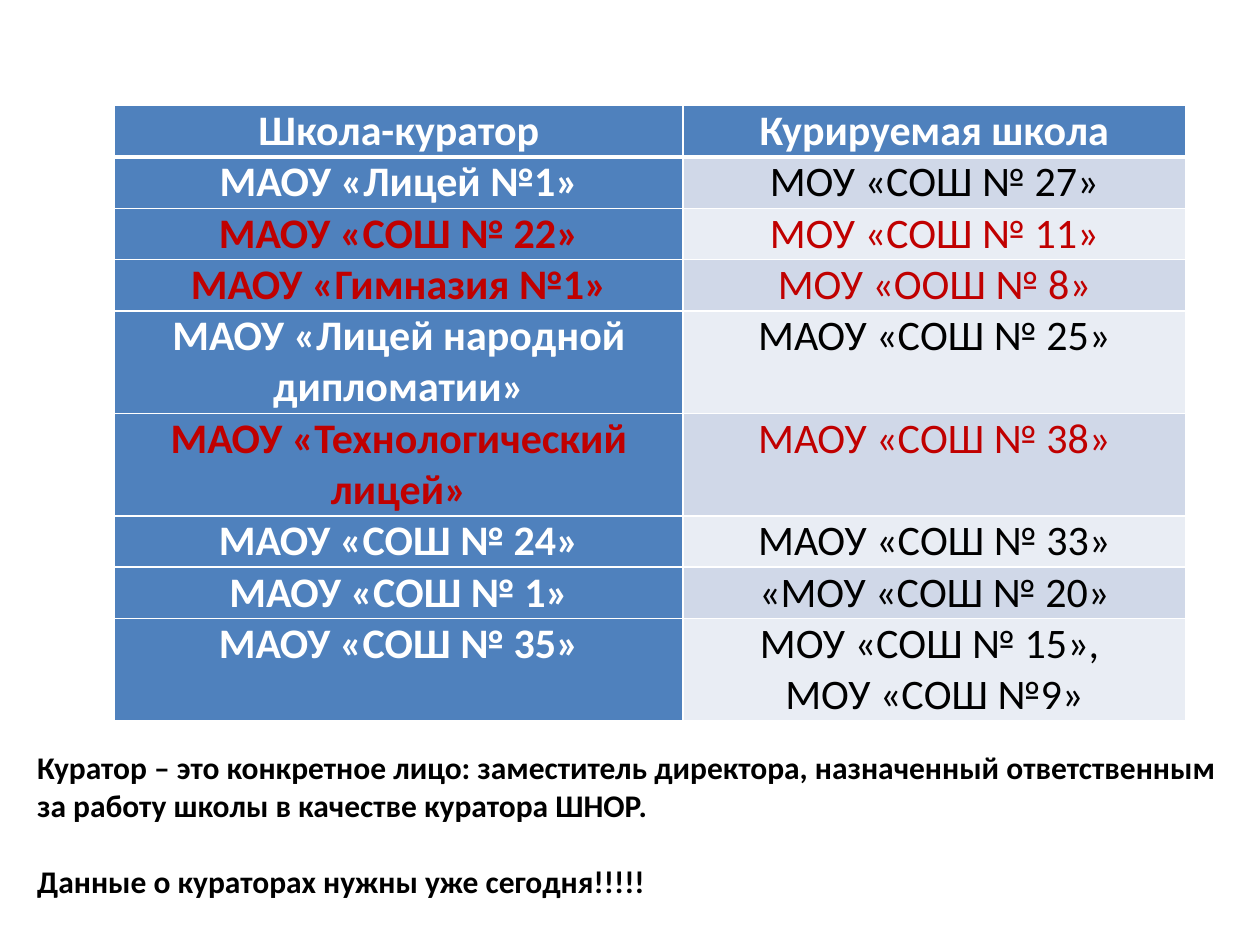
from lxml.etree import SubElement as Sub
from pptx import Presentation
from pptx.dml.color import RGBColor
from pptx.enum.text import PP_ALIGN as Align
from pptx.oxml.ns import qn
from pptx.util import Cm, Pt

BLUE, RED, WHITE, BLACK = "4F81BD", "C00000", "FFFFFF", "000000"
BANDS = ["D0D8E8", "E9EDF4"]
LINE = 1.03  # height of one line of table text, cm

HEADS = ["Школа-куратор", "Курируемая школа"]
# curator, school, marked red, lines
PAIRS = [
    ("МАОУ «Лицей №1»", "МОУ «СОШ № 27»", False, 1),
    ("МАОУ «СОШ № 22»", "МОУ «СОШ № 11»", True, 1),
    ("МАОУ «Гимназия №1»", "МОУ «ООШ № 8»", True, 1),
    ("МАОУ «Лицей народной дипломатии»", "МАОУ «СОШ № 25»", False, 2),
    ("МАОУ «Технологический лицей»", "МАОУ «СОШ № 38»", True, 2),
    ("МАОУ «СОШ № 24»", "МАОУ «СОШ № 33»", False, 1),
    ("МАОУ «СОШ № 1»", "«МОУ «СОШ № 20»", False, 1),
    ("МАОУ «СОШ № 35»", "МОУ «СОШ № 15», \nМОУ «СОШ №9»", False, 2),
]
NOTE = [
    "Куратор – это конкретное лицо: заместитель директора, назначенный ответственным",
    "за работу школы в качестве куратора ШНОР.",
    "Данные о кураторах нужны уже сегодня!!!!!",
]


def rgb(code):
    return RGBColor.from_string(code)


class Deck:
    font = "Calibri"

    def __init__(self):
        self.prs = Presentation()
        self.prs.slide_width, self.prs.slide_height = Cm(25.4), Cm(19.05)
        self.slide = self.prs.slides.add_slide(self.prs.slide_layouts[6])

    def style(self, frame, size, color, bold, align):
        for para in frame.paragraphs:
            para.alignment = align
            for run in para.runs:
                run.font.name, run.font.size = self.font, Pt(size)
                run.font.bold, run.font.color.rgb = bold, rgb(color)

    def edge(self, cell, side, width):
        """Draw one white border of a cell."""
        line = Sub(cell._tc.get_or_add_tcPr(), qn(f"a:{side}"), w=str(Pt(width)))
        Sub(Sub(line, qn("a:solidFill")), qn("a:srgbClr"), val=WHITE)

    def cell(self, cell, text, fill, color, bold, top=1, foot=1):
        cell.text_frame.text = text
        cell.margin_left = cell.margin_right = Cm(0.18)
        cell.margin_top = cell.margin_bottom = 0
        for side, width in zip(("lnL", "lnR", "lnT", "lnB"), (1, 1, top, foot)):
            self.edge(cell, side, width)
        cell.fill.solid()
        cell.fill.fore_color.rgb = rgb(fill)
        self.style(cell.text_frame, 24, color, bold, Align.CENTER)

    def table(self, left, top, widths, heads, pairs):
        lines = [1] + [pair[3] for pair in pairs]
        table = self.slide.shapes.add_table(
            len(lines), len(widths), Cm(left), Cm(top),
            Cm(sum(widths)), Cm(LINE * sum(lines))).table
        for col, width in zip(table.columns, widths):
            col.width = Cm(width)
        for row, count in zip(table.rows, lines):
            row.height = Cm(LINE * count)
        for col, head in enumerate(heads):
            self.cell(table.cell(0, col), head, BLUE, WHITE, True, foot=3)
        for row, (lead, school, red, _) in enumerate(pairs, 1):
            top = 3 if row == 1 else 1
            self.cell(table.cell(row, 0), lead, BLUE,
                      RED if red else WHITE, True, top)
            self.cell(table.cell(row, 1), school, BANDS[(row - 1) % 2],
                      RED if red else BLACK, False, top)

    def note(self, left, top, width, height, lines):
        box = self.slide.shapes.add_textbox(Cm(left), Cm(top), Cm(width), Cm(height))
        frame = box.text_frame
        frame.word_wrap = False
        frame.text = "\n".join(lines)
        self.style(frame, 18, BLACK, True, Align.LEFT)
        frame.paragraphs[-1].space_before = Pt(22)


deck = Deck()
deck.table(2.31, 2.13, [11.46, 10.13], HEADS, PAIRS)
deck.note(0.5, 14.96, 24.5, 3.33, NOTE)
deck.prs.save("out.pptx")
